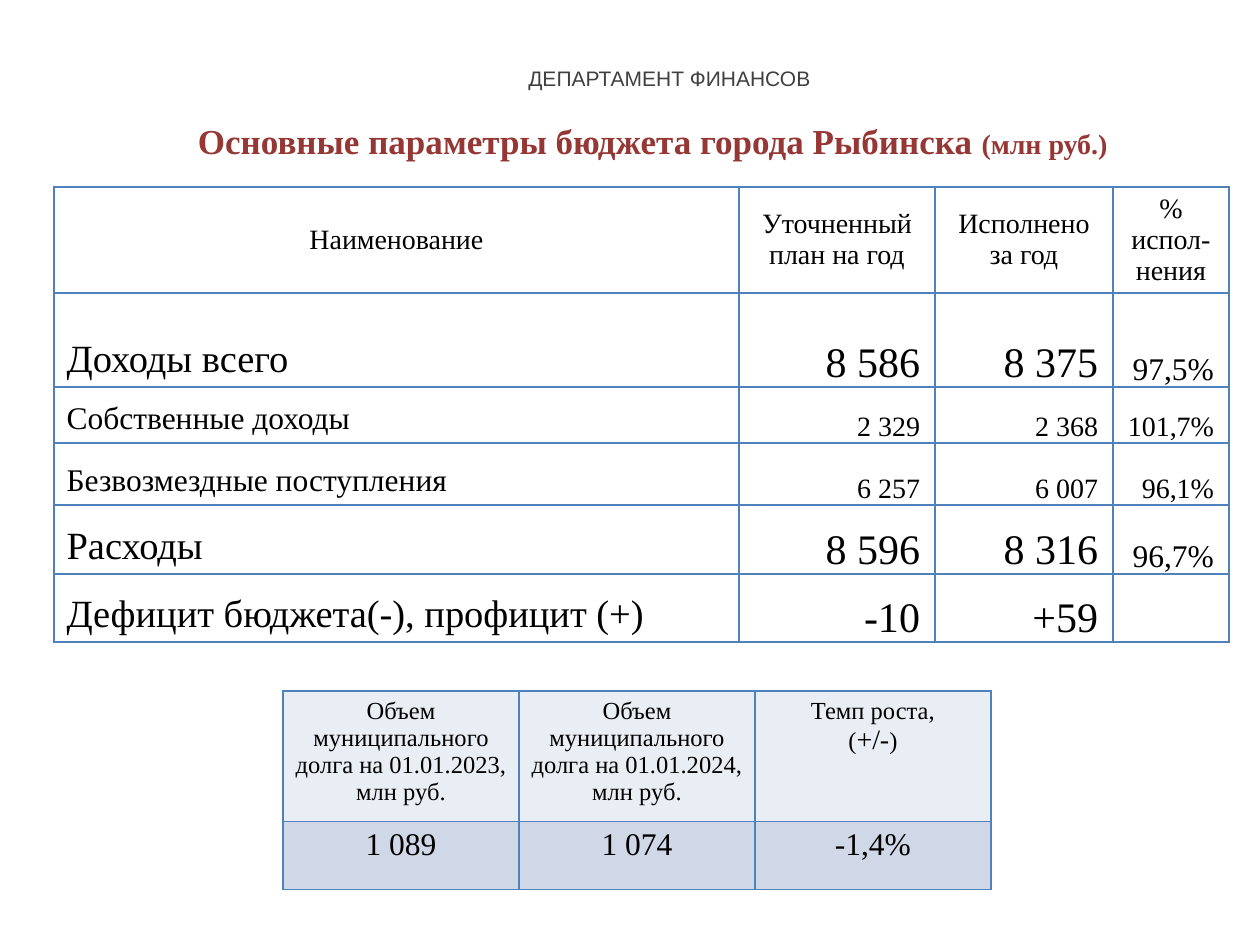
import pptx
import pptx.util
import pptx.dml.color
import pptx.enum.text
import pptx.oxml
import pptx.oxml.ns
from dataclasses import dataclass

SCALE = 914400 / 126
ALIGN = pptx.enum.text.PP_ALIGN
ANCHOR = pptx.enum.text.MSO_ANCHOR


@dataclass(frozen=True)
class Theme:
    serif: str = "Times New Roman"
    sans: str = "Arial"
    text: str = "000000"
    title: str = "953735"
    department: str = "404040"
    border: str = "4F81BD"
    debt_header: str = "E9EDF4"
    debt_value: str = "D0D8E8"
    caption_size: int = 12
    debt_header_size: int = 14
    body_size: int = 16
    item_size: int = 18
    title_size: int = 20
    total_label_size: int = 22
    total_size: int = 24


THEME = Theme()


def px(value):
    return pptx.util.Emu(round(value * SCALE))


def rgb(value):
    return pptx.dml.color.RGBColor.from_string(value)


def style_font(font, size, name=THEME.serif, color=THEME.text, bold=False):
    font.size = pptx.util.Pt(size)
    font.name = name
    font.bold = bold
    font.color.rgb = rgb(color)


def write_lines(frame, lines, size, align, **style):
    for index, line in enumerate(lines):
        para = frame.add_paragraph() if index else frame.paragraphs[0]
        para.alignment = align
        spans = [(line, size)] if isinstance(line, str) else line
        for text, span_size in spans:
            span = para.add_run()
            span.text = text
            if span_size != size:
                span.font.size = pptx.util.Pt(span_size)
        style_font(para.font, size, **style)


def set_borders(cell):
    properties = cell._tc.get_or_add_tcPr()
    for side in ("lnL", "lnR", "lnT", "lnB"):
        properties.append(pptx.oxml.parse_xml(
            f'<a:{side} {pptx.oxml.ns.nsdecls("a")} w="12700"><a:solidFill>'
            f'<a:srgbClr val="{THEME.border}"/></a:solidFill></a:{side}>'))


def fill_cell(cell, lines, size, align, anchor, fill=None):
    set_borders(cell)
    if fill:
        cell.fill.solid()
        cell.fill.fore_color.rgb = rgb(fill)
    else:
        cell.fill.background()
    cell.vertical_anchor = anchor
    write_lines(cell.text_frame, lines, size, align)


def add_grid(page, left, top, widths, heights):
    frame = page.shapes.add_table(len(heights), len(widths), px(left), px(top),
                                  px(sum(widths)), px(sum(heights)))
    table = frame.table
    table.first_row = False
    table.horz_banding = False
    for column, width in zip(table.columns, widths):
        column.width = px(width)
    for row, height in zip(table.rows, heights):
        row.height = px(height)
    return table


def add_title(page):
    title = page.shapes.title
    title.left, title.top, title.width, title.height = map(px, (74, 111, 1171, 59))
    frame = title.text_frame
    frame.word_wrap = True
    frame.auto_size = pptx.enum.text.MSO_AUTO_SIZE.NONE
    frame.vertical_anchor = ANCHOR.MIDDLE
    frame.margin_right = px(26)
    line = [("Основные параметры бюджета города Рыбинска ", THEME.title_size),
            ("(млн руб.)", THEME.body_size)]
    write_lines(frame, [line], THEME.title_size, ALIGN.CENTER,
                color=THEME.title, bold=True)


def add_department(page):
    box = page.shapes.add_textbox(px(412), px(49), px(515), px(59))
    box.text_frame.word_wrap = True
    box.text_frame.vertical_anchor = ANCHOR.MIDDLE
    write_lines(box.text_frame, ["ДЕПАРТАМЕНТ ФИНАНСОВ"], THEME.caption_size,
                ALIGN.CENTER, name=THEME.sans, color=THEME.department)


def add_budget_table(page):
    headers = [["Наименование"], ["Уточненный план на год"],
               ["Исполнено", "за год"], ["% испол- нения"]]
    total = (THEME.total_label_size, THEME.total_size, THEME.item_size)
    item = (THEME.item_size, THEME.body_size, THEME.body_size)
    rows = [
        (total, "Доходы всего", "8 586", "8 375", "97,5%"),
        (item, "Собственные доходы", "2 329", "2 368", "101,7%"),
        (item, "Безвозмездные поступления", "6 257", "6 007", "96,1%"),
        (total, "Расходы", "8 596", "8 316", "96,7%"),
        (total, "Дефицит бюджета(-), профицит (+)", "-10", "+59", ""),
    ]
    table = add_grid(page, 54, 187, [685, 196, 178, 116],
                     [106, 94, 56, 62, 69, 68])
    for column, lines in enumerate(headers):
        fill_cell(table.cell(0, column), lines, THEME.body_size,
                  ALIGN.CENTER, ANCHOR.MIDDLE)
    for index, (sizes, label, *values) in enumerate(rows, start=1):
        label_size, value_size, percent_size = sizes
        fill_cell(table.cell(index, 0), [label], label_size,
                  ALIGN.LEFT, ANCHOR.BOTTOM)
        value_sizes = (value_size, value_size, percent_size)
        for column, (value, size) in enumerate(zip(values, value_sizes), start=1):
            cell = table.cell(index, column)
            cell.margin_left = cell.margin_top = px(1)
            cell.margin_right, cell.margin_bottom = px(15), px(0)
            fill_cell(cell, [value] if value else [], size,
                      ALIGN.RIGHT, ANCHOR.BOTTOM)


def add_debt_table(page):
    small = THEME.debt_header_size
    headers = [[f"Объем муниципального долга на 01.01.{year},", "млн руб."]
               for year in (2023, 2024)]
    headers.append(["Темп роста,",
                    [("(", small), ("+/-", THEME.body_size), (")", small)]])
    values = ["1 089", "1 074", "-1,4%"]
    table = add_grid(page, 283, 691, [236] * 3, [121, 68])
    for column, (lines, value) in enumerate(zip(headers, values)):
        fill_cell(table.cell(0, column), lines, small,
                  ALIGN.CENTER, ANCHOR.TOP, THEME.debt_header)
        fill_cell(table.cell(1, column), [value], THEME.item_size,
                  ALIGN.CENTER, ANCHOR.TOP, THEME.debt_value)


def main():
    deck = pptx.Presentation()
    deck.slide_width, deck.slide_height = px(1260), px(945)
    page = deck.slides.add_slide(deck.slide_layouts[5])
    add_title(page)
    add_budget_table(page)
    add_department(page)
    add_debt_table(page)
    deck.save("out.pptx")


if __name__ == "__main__":
    main()
